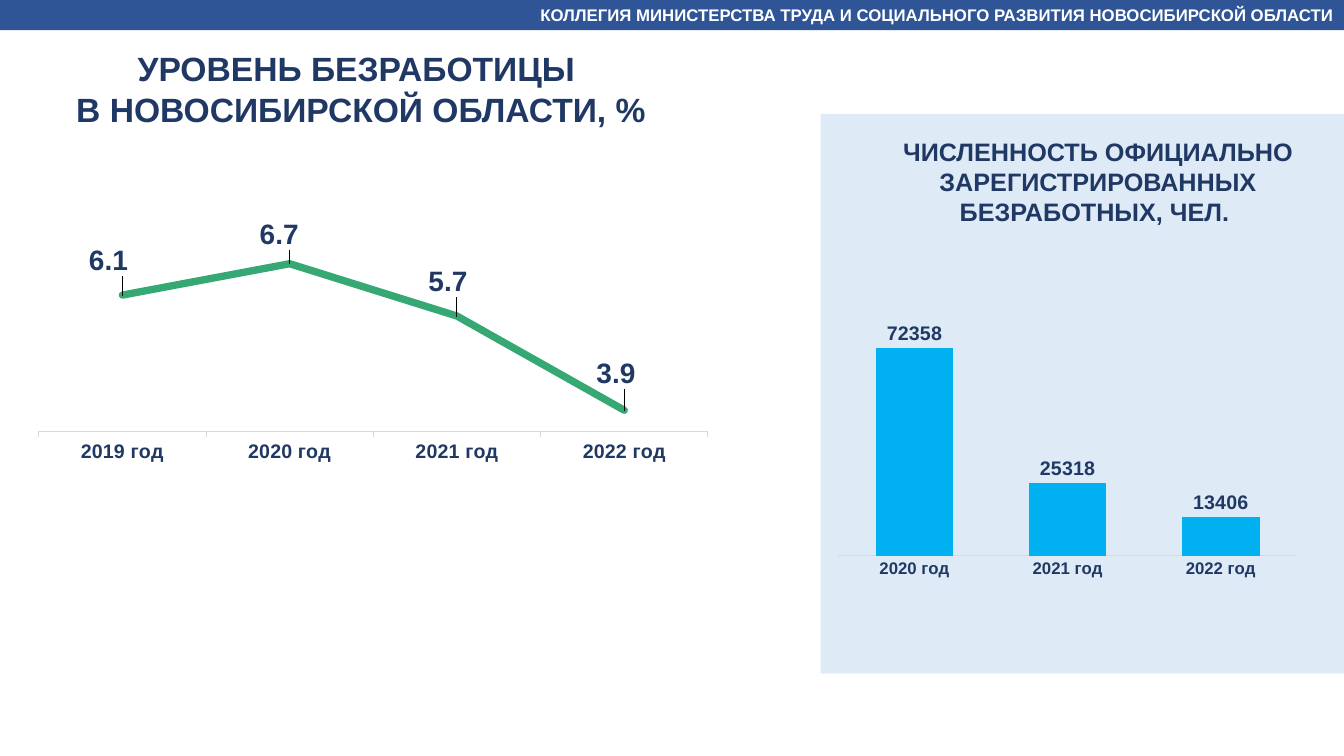
from dataclasses import dataclass

from lxml import etree
from pptx import Presentation
from pptx.chart.data import CategoryChartData
from pptx.dml.color import RGBColor
from pptx.enum.chart import XL_CHART_TYPE, XL_LABEL_POSITION, XL_TICK_MARK
from pptx.enum.shapes import MSO_SHAPE
from pptx.enum.text import MSO_ANCHOR, PP_ALIGN
from pptx.oxml.ns import qn
from pptx.util import Inches, Pt

LINE, COLUMN = XL_CHART_TYPE.LINE, XL_CHART_TYPE.COLUMN_CLUSTERED
LABEL_CENTER, LABEL_OUTSIDE = XL_LABEL_POSITION.CENTER, XL_LABEL_POSITION.OUTSIDE_END
TICK_OUT, TICK_NONE = XL_TICK_MARK.OUTSIDE, XL_TICK_MARK.NONE
RECTANGLE = MSO_SHAPE.RECTANGLE
MIDDLE, TOP = MSO_ANCHOR.MIDDLE, MSO_ANCHOR.TOP
CENTER, RIGHT = PP_ALIGN.CENTER, PP_ALIGN.RIGHT


@dataclass(frozen=True)
class Theme:
    font: str = "Arial"
    navy: str = "203864"
    banner: str = "2F5597"
    panel: str = "DEEBF7"
    white: str = "FFFFFF"
    axis: str = "D9D9D9"
    green: str = "36A874"
    sky: str = "00B0F0"
    title: float = 24
    subtitle: float = 18
    banner_size: float = 12
    rate_labels: float = 20
    rate_years: float = 14
    count_labels: float = 14
    count_years: float = 12
    rate_line: float = 5.25
    axis_line: float = 0.75


def manual_layout(**values):
    """Build a chart layout element from its settings."""
    layout = etree.Element(qn("c:layout"))
    manual = etree.SubElement(layout, qn("c:manualLayout"))
    for tag, value in values.items():
        etree.SubElement(manual, qn(f"c:{tag}")).set("val", str(value))
    return layout


class SlideBuilder:
    def __init__(self, slide, theme):
        self.slide = slide
        self.theme = theme

    def style_font(self, font, size, color):
        font.name = self.theme.font
        font.size = Pt(size)
        font.bold = True
        font.color.rgb = RGBColor.from_string(color)

    def rectangle(self, box, color):
        shape = self.slide.shapes.add_shape(RECTANGLE, *map(Inches, box))
        shape.shadow.inherit = False
        shape.fill.solid()
        shape.fill.fore_color.rgb = RGBColor.from_string(color)
        shape.line.fill.background()
        return shape

    def add_lines(self, frame, lines, size, color, align, anchor=TOP):
        frame.word_wrap = True
        frame.vertical_anchor = anchor
        for index, line in enumerate(lines):
            paragraph = frame.add_paragraph() if index else frame.paragraphs[0]
            paragraph.alignment = align
            run = paragraph.add_run()
            run.text = line
            self.style_font(run.font, size, color)

    def heading(self, box, lines, size):
        frame = self.slide.shapes.add_textbox(*map(Inches, box)).text_frame
        self.add_lines(frame, lines, size, self.theme.navy, CENTER)

    def chart(self, kind, box, values_by_year, plot_area, top_value, year_size, tick):
        data = CategoryChartData()
        data.categories = list(values_by_year)
        data.add_series("Series 1", list(values_by_year.values()))
        chart = self.slide.shapes.add_chart(kind, *map(Inches, box), data).chart
        chart.has_legend = chart.has_title = False
        chart.font.name = self.theme.font
        chart.font.size = Pt(10)
        chart.plots[0].vary_by_categories = False

        # Plot area inside the chart frame
        area = chart._chartSpace.chart.plotArea
        for old in area.findall(qn("c:layout")):
            area.remove(old)
        x, y, w, h = plot_area
        area.insert(0, manual_layout(layoutTarget="inner", xMode="edge", yMode="edge",
                                     x=x, y=y, w=w, h=h))

        # Axes
        values = chart.value_axis
        values.minimum_scale, values.maximum_scale = 0, top_value
        values.has_major_gridlines = False
        values.visible = False
        years = chart.category_axis
        years.has_major_gridlines = False
        years.major_tick_mark = tick
        years.format.line.color.rgb = RGBColor.from_string(self.theme.axis)
        years.format.line.width = Pt(self.theme.axis_line)
        self.style_font(years.tick_labels.font, year_size, self.theme.navy)
        return chart

    def value_labels(self, series, size, position):
        labels = series.data_labels
        labels.show_value = True
        labels.position = position
        self.style_font(labels.font, size, self.theme.navy)

    def rate_chart(self, box, rates, label_shifts):
        theme = self.theme
        chart = self.chart(LINE, box, rates, (0.005, 0.125, 0.972, 0.864), 8,
                           theme.rate_years, TICK_OUT)
        chart.value_axis.crosses_at = 3.5
        series = chart.plots[0].series[0]
        series.smooth = False
        series.format.line.color.rgb = RGBColor.from_string(theme.green)
        series.format.line.width = Pt(theme.rate_line)
        series.format.line._ln.set("cap", "rnd")
        self.value_labels(series, theme.rate_labels, LABEL_CENTER)
        for index, (x, y) in enumerate(label_shifts):
            label = series.points[index].data_label
            self.style_font(label.font, theme.rate_labels, theme.navy)
            label.position = LABEL_CENTER
            label._dLbl.insert(1, manual_layout(x=x, y=y))

    def count_chart(self, box, counts):
        theme = self.theme
        chart = self.chart(COLUMN, box, counts, (0.124, 0.165, 0.83, 0.49), 80000,
                           theme.count_years, TICK_NONE)
        plot = chart.plots[0]
        plot.gap_width, plot.overlap = 97, -27
        series = plot.series[0]
        series.format.fill.solid()
        series.format.fill.fore_color.rgb = RGBColor.from_string(theme.sky)
        self.value_labels(series, theme.count_labels, LABEL_OUTSIDE)


def main():
    theme = Theme()
    deck = Presentation()
    deck.slide_width, deck.slide_height = Inches(13.33), Inches(7.5)
    builder = SlideBuilder(deck.slides.add_slide(deck.slide_layouts[6]), theme)

    # Panel behind the registered unemployed
    builder.rectangle((8.14, 1.13, 5.19, 5.55), theme.panel)

    # Unemployment rate
    builder.rate_chart(
        (0.35, 1.34, 6.83, 4.81),
        {"2019 год": 6.1, "2020 год": 6.7, "2021 год": 5.7, "2022 год": 3.9},
        [(-0.02, -0.07), (-0.015, -0.06), (-0.013, -0.07), (-0.012, -0.075)])

    # Top banner
    banner = builder.rectangle((0, 0, 13.33, 0.3), theme.banner)
    builder.add_lines(
        banner.text_frame,
        ["КОЛЛЕГИЯ МИНИСТЕРСТВА ТРУДА И СОЦИАЛЬНОГО РАЗВИТИЯ НОВОСИБИРСКОЙ ОБЛАСТИ"],
        theme.banner_size, theme.white, RIGHT, MIDDLE)

    # Headings
    builder.heading((0, 0.43, 7.16, 0.91),
                    ["УРОВЕНЬ БЕЗРАБОТИЦЫ ", "В НОВОСИБИРСКОЙ ОБЛАСТИ, %"], theme.title)
    builder.heading((8.53, 1.3, 4.72, 1.01),
                    ["ЧИСЛЕННОСТЬ ОФИЦИАЛЬНО ЗАРЕГИСТРИРОВАННЫХ БЕЗРАБОТНЫХ, ЧЕЛ. "],
                    theme.subtitle)

    # Registered unemployed
    builder.count_chart((7.63, 2.47, 5.49, 4.65),
                        {"2020 год": 72358, "2021 год": 25318, "2022 год": 13406})

    deck.save("out.pptx")


if __name__ == "__main__":
    main()
